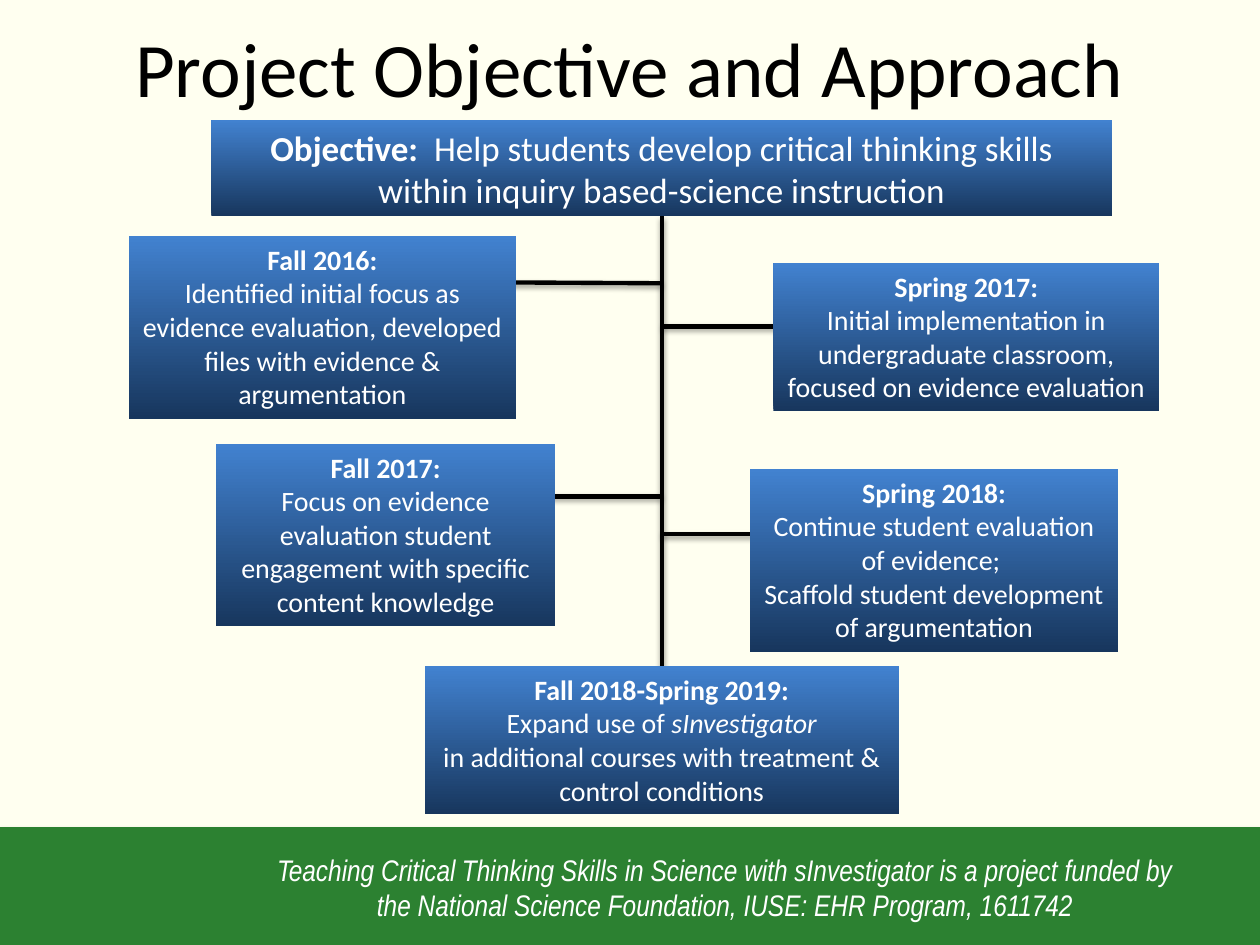
from dataclasses import dataclass

import pptx
import pptx.dml.color
import pptx.enum.shapes
import pptx.enum.text
import pptx.oxml
import pptx.oxml.ns
import pptx.util
from pptx.util import Cm

SHAPES = pptx.enum.shapes.MSO_SHAPE
ANCHOR = pptx.enum.text.MSO_ANCHOR
SPINE_X = 13.34


@dataclass
class Run:
    text: str
    bold: bool = False
    italic: bool = False


@dataclass
class Box:
    left: float
    top: float
    width: float
    height: float
    runs: list[Run]
    size: int = 16


@dataclass
class Branch:
    y: float
    x: float
    outer_y: float


OBJECTIVE = Box(4.26, 2.42, 18.16, 1.94, [
    Run("Objective:  ", bold=True),
    Run("Help students develop critical thinking skills within inquiry "
        "based-science instruction")], 20)
STAGES = [
    Box(2.6, 4.76, 7.8, 3.68, [
        Run("Fall 2016:\n", bold=True),
        Run("Identified initial focus as evidence evaluation, developed "
            "files with evidence & argumentation")]),
    Box(15.59, 5.3, 7.78, 2.99, [
        Run("Spring 2017:\n", bold=True),
        Run("Initial implementation in undergraduate classroom, "
            "focused on evidence evaluation")]),
    Box(4.35, 8.95, 6.85, 3.68, [
        Run("Fall 2017:\n", bold=True),
        Run("Focus on evidence evaluation student engagement "
            "with specific content knowledge")]),
    Box(15.12, 9.46, 7.42, 3.68, [
        Run("Spring 2018:\n", bold=True),
        Run("Continue student evaluation of evidence; \n"
            "Scaffold student development of argumentation")]),
]
EXPANSION = Box(8.56, 13.43, 9.56, 2.99, [
    Run("Fall 2018-Spring 2019:\n", bold=True),
    Run("Expand use of "),
    Run("sInvestigator\n", italic=True),
    Run("in additional courses with treatment & control conditions")])
BRANCHES = [Branch(5.71, 9.63, 5.69), Branch(6.58, 15.72, 6.58),
            Branch(10.01, 10.92, 10.01), Branch(10.77, 15.75, 10.77)]
TITLE = Box(1.27, 0, 22.86, 2.69, [Run("Project Objective and Approach")], 44)
CREDIT = Box(5.03, 17.04, 19.18, 1.7, [
    Run("Teaching Critical Thinking Skills in Science with sInvestigator is a "
        "project funded by the National Science Foundation, IUSE: EHR Program, "
        "1611742", italic=True)], 17)


def rgb(value: str) -> pptx.dml.color.RGBColor:
    return pptx.dml.color.RGBColor.from_string(value)


def place(box: Box) -> tuple:
    return Cm(box.left), Cm(box.top), Cm(box.width), Cm(box.height)


def add_shadow(sp, blur: float, distance: float, alpha: int) -> None:
    emu = pptx.util.Pt
    sp._element.spPr.append(pptx.oxml.parse_xml(
        f'<a:effectLst {pptx.oxml.ns.nsdecls("a")}>'
        f'<a:outerShdw blurRad="{emu(blur)}" dist="{emu(distance)}" '
        'dir="5400000" rotWithShape="0">'
        f'<a:srgbClr val="000000"><a:alpha val="{alpha * 1000}"/></a:srgbClr>'
        '</a:outerShdw></a:effectLst>'))


def write(sp, box: Box, color: str, font: str = "Calibri",
          anchor=ANCHOR.TOP) -> None:
    tf = sp.text_frame
    tf.word_wrap = True
    tf.vertical_anchor = anchor
    p = tf.paragraphs[0]
    p.alignment = pptx.enum.text.PP_ALIGN.CENTER
    p.font.name = font
    p.font.size = pptx.util.Pt(box.size)
    p.font.color.rgb = rgb(color)
    for run in box.runs:
        for i, line in enumerate(run.text.split("\n")):
            if i:
                p.add_line_break()
            if line:
                r = p.add_run()
                r.text = line
                r.font.bold = run.bold
                r.font.italic = run.italic


def add_text(s, box: Box, color: str, **style) -> None:
    write(s.shapes.add_textbox(*place(box)), box, color, **style)


def add_box(s, box: Box):
    sp = s.shapes.add_shape(SHAPES.RECTANGLE, *place(box))
    sp.shadow.inherit = False
    sp.fill.gradient()
    sp.fill.gradient_angle = 90
    for stop, color in zip(sp.fill.gradient_stops, ("17365D", "4282D0")):
        stop.color.rgb = rgb(color)
    sp.line.fill.background()
    write(sp, box, "FFFFFF")
    return sp


def add_line(s, x1: float, y1: float, x2: float, y2: float):
    line = s.shapes.add_connector(pptx.enum.shapes.MSO_CONNECTOR.STRAIGHT,
                                  Cm(x1), Cm(y1), Cm(x2), Cm(y2))
    line.line.color.rgb = rgb("000000")
    line.line.width = pptx.util.Pt(2.5)
    add_shadow(line, 3.1, 1.6, 38)
    return line


def add_footer(s) -> None:
    sp = s.shapes.add_shape(SHAPES.RECTANGLE, 0, Cm(16.69), Cm(25.4), Cm(2.36))
    sp.fill.solid()
    sp.fill.fore_color.rgb = rgb("2C8131")
    sp.line.color.rgb = rgb("2C8131")
    sp.line.width = pptx.util.Pt(0.75)
    add_shadow(sp, 3.1, 1.8, 35)
    add_text(s, CREDIT, "FFFFFF", font="Arial Narrow")


def main() -> None:
    """Build the project timeline slide and save it."""
    prs = pptx.Presentation()
    prs.slide_width, prs.slide_height = Cm(25.4), Cm(19.05)
    s = prs.slides.add_slide(prs.slide_layouts[6])
    s.background.fill.solid()
    s.background.fill.fore_color.rgb = rgb("FFFFF0")
    add_footer(s)
    for branch in BRANCHES:
        add_line(s, SPINE_X, branch.y, branch.x, branch.outer_y)
    spine = add_line(s, SPINE_X, 4.36, SPINE_X, 13.43)
    add_text(s, TITLE, "000000", anchor=ANCHOR.MIDDLE)
    objective = add_box(s, OBJECTIVE)
    for stage in STAGES:
        add_box(s, stage)
    expansion = add_box(s, EXPANSION)
    spine.begin_connect(objective, 2)
    spine.end_connect(expansion, 0)
    prs.save("out.pptx")


if __name__ == "__main__":
    main()
